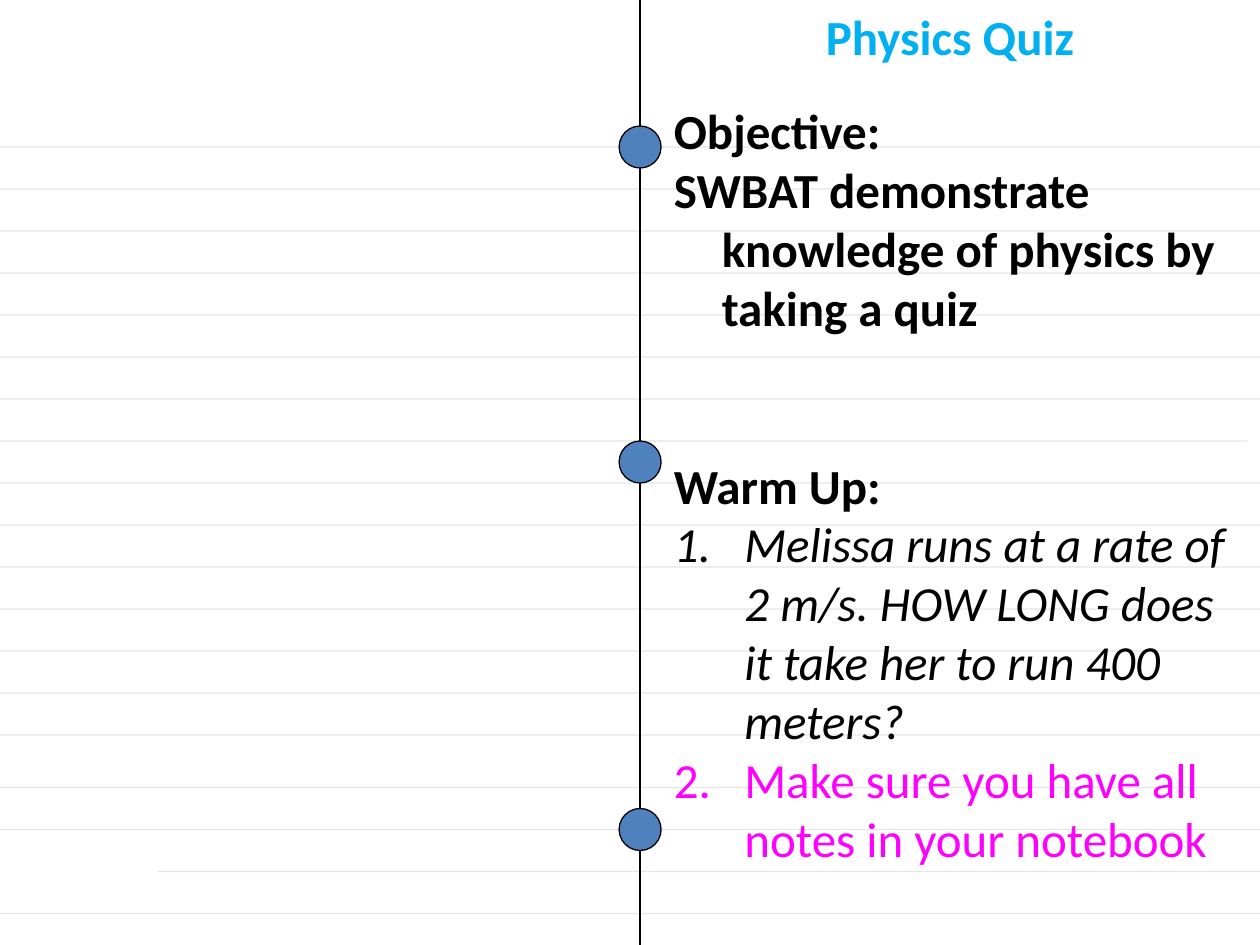
from lxml.etree import SubElement
from pptx import Presentation
from pptx.dml.color import RGBColor
from pptx.enum.shapes import MSO_CONNECTOR, MSO_SHAPE
from pptx.enum.text import PP_ALIGN
from pptx.oxml.ns import qn
from pptx.util import Inches, Pt

WIDTH, HEIGHT = 10, 7.5
ROW = HEIGHT / 22.5
SPINE = 5.08
FONT, SIZE = "Calibri", 28
BLACK, BLUE, SKY, MAGENTA = "000000", "4F81BD", "00B0F0", "FF00FF"


def color(value):
    """Turn a hex string into a colour."""
    return RGBColor.from_string(value)


def add_line(slide, start, end, opacity=100):
    """Draw a thin black line, optionally faint."""
    line = slide.shapes.add_connector(
        MSO_CONNECTOR.STRAIGHT, *(Inches(value) for value in (*start, *end)))
    line.line.color.rgb = color(BLACK)
    line.line.width = Pt(0.75)
    properties = line._element.spPr
    if opacity < 100:
        fill_color = properties.find(".//" + qn("a:srgbClr"))
        SubElement(fill_color, qn("a:alpha"), val=str(opacity * 1000))
    SubElement(properties, qn("a:effectLst"))


def add_ruling(slide, left, width):
    """Rule the page: fifteen rows, then four lower rows after a wider gap."""
    upper = [3.5 * ROW + row * ROW for row in range(15)]
    lower = [6.25 + row * ROW for row in range(4)]
    spans = {7: (0, 0.99), 17: (0.125, 1)}
    for index, top in enumerate(upper + lower):
        start, end = spans.get(index, (0, 1))
        add_line(slide, (left + start * width, top), (left + end * width, top), 10)


def add_binding(slide, center, height):
    """Draw the spine with its three holes."""
    add_line(slide, (center, 0), (center, height))
    for top in (3 * ROW, 10.5 * ROW, 19.25 * ROW):
        hole = slide.shapes.add_shape(
            MSO_SHAPE.OVAL, Inches(center - ROW / 2), Inches(top), Inches(ROW), Inches(ROW))
        hole.shadow.inherit = False
        hole.fill.solid()
        hole.fill.fore_color.rgb = color(BLUE)
        hole.line.color.rgb = color(BLACK)
        hole.line.width = Pt(0.75)


def add_text_frame(slide, box):
    """Add a wrapping text box and return its frame."""
    frame = slide.shapes.add_textbox(*(Inches(value) for value in box)).text_frame
    frame.word_wrap = True
    return frame


def add_run(paragraph, text, hex_color=BLACK, bold=False, italic=False):
    """Add one styled run."""
    run = paragraph.add_run()
    run.text = text
    run.font.name, run.font.size = FONT, Pt(SIZE)
    run.font.bold, run.font.italic = bold, italic
    run.font.color.rgb = color(hex_color)


def set_indent(paragraph, indent, numbered):
    """Hang a paragraph and number it if asked."""
    properties = paragraph._p.get_or_add_pPr()
    properties.set("marL", str(Inches(indent)))
    properties.set("indent", str(-Inches(indent)))
    if numbered:
        SubElement(properties, qn("a:buFont"), typeface="+mj-lt")
        SubElement(properties, qn("a:buAutoNum"), type="arabicPeriod")
    else:
        SubElement(properties, qn("a:buNone"))


def add_title(slide, box):
    """Write the centred title."""
    paragraph = add_text_frame(slide, box).paragraphs[0]
    paragraph.alignment = PP_ALIGN.CENTER
    add_run(paragraph, "Physics Quiz", SKY, bold=True)


def add_agenda(slide, box):
    """Write the objective and the numbered warm up."""
    heading = {"bold": True}
    items = [
        ("Objective:", heading, False, 0),
        ("SWBAT demonstrate knowledge of physics by taking a quiz", heading, False, 0),
        ("Warm Up:", heading, False, 68),
        ("Melissa runs at a rate of 2 m/s. HOW LONG does it take her to run 400 meters?",
         {"italic": True}, True, 0),
        ("Make sure you have all notes in your notebook",
         {"hex_color": MAGENTA}, True, 0),
    ]
    frame = add_text_frame(slide, box)
    for index, (text, style, numbered, gap) in enumerate(items):
        paragraph = frame.add_paragraph() if index else frame.paragraphs[0]
        paragraph.space_before = Pt(gap)
        set_indent(paragraph, 0.56 if numbered else 0.38, numbered)
        add_run(paragraph, text, **style)


def main():
    """Build the notebook slide."""
    presentation = Presentation()
    presentation.slide_width, presentation.slide_height = Inches(WIDTH), Inches(HEIGHT)
    slide = presentation.slides.add_slide(presentation.slide_layouts[6])
    add_ruling(slide, 0, WIDTH)
    add_binding(slide, SPINE, HEIGHT)
    add_agenda(slide, (5.25, 0.75, WIDTH - 5.25, HEIGHT - 0.75))
    add_title(slide, (SPINE, 0, WIDTH - SPINE, 0.57))
    presentation.save("out.pptx")


if __name__ == "__main__":
    main()
